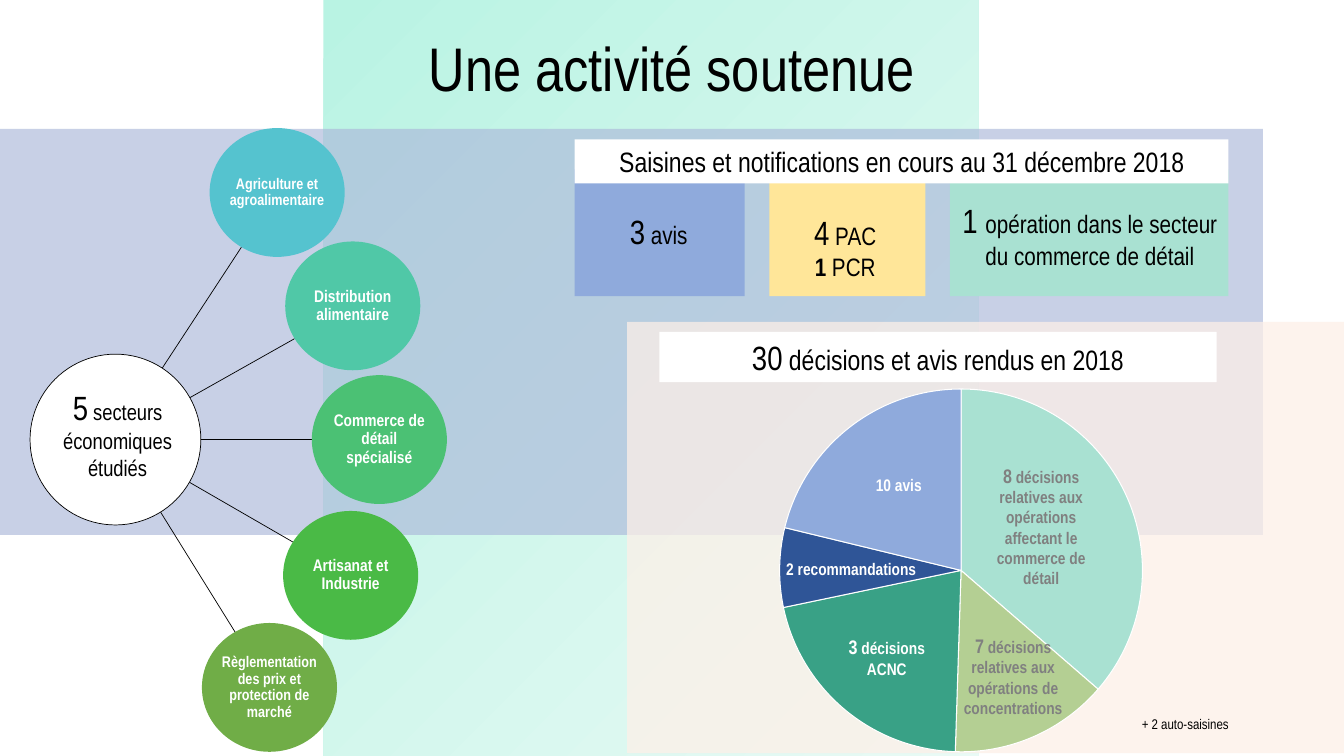
import math

from lxml import etree
from pptx import Presentation
from pptx.chart.data import CategoryChartData
from pptx.dml.color import RGBColor
from pptx.enum.chart import XL_CHART_TYPE
from pptx.enum.shapes import MSO_CONNECTOR, MSO_SHAPE
from pptx.enum.text import MSO_ANCHOR, PP_ALIGN
from pptx.oxml.ns import qn
from pptx.util import Pt

RECTANGLE, OVAL = MSO_SHAPE.RECTANGLE, MSO_SHAPE.OVAL
STRAIGHT = MSO_CONNECTOR.STRAIGHT
PIE = XL_CHART_TYPE.PIE
LEFT, CENTER = PP_ALIGN.LEFT, PP_ALIGN.CENTER
TOP, MIDDLE = MSO_ANCHOR.TOP, MSO_ANCHOR.MIDDLE

FONT = "Arial Narrow"
COLORS = {
    "black": "000000", "white": "FFFFFF", "gray": "808080",
    "mint_start": "B9F3E3", "mint_end": "E9FAF5",
    "band": "ABB8DA", "peach": "FDF0E8",
    "aqua": "A9E1D2", "blue": "8FAADC", "yellow": "FFE699",
    "olive": "B4CF93", "green": "39A186", "navy": "2F5597",
    "farming": "55C3CF", "food": "50C8A7", "retail": "4BC174",
    "craft": "4ABA46", "pricing": "70AD47",
}

# Centre x, centre y, colour, label, text size
SECTORS = [
    (198, 137.5, "farming", "Agriculture et agroalimentaire", 11),
    (252, 218.5, "food", "Distribution alimentaire", 12),
    (271, 314, "retail", "Commerce de détail spécialisé", 12),
    (250.5, 411, "craft", "Artisanat et Industrie", 12),
    (192.5, 491, "pricing",
     "Règlementation des prix et protection de marché", 11),
]
SECTOR_WIDTH, SECTOR_HEIGHT = 96.5, 92
HUB_X, HUB_Y, HUB_RADIUS = 82.5, 314, 61

SLICES = [(36, "aqua"), (14, "olive"), (21, "green"), (7, "navy"), (21, "blue")]

# Left, top, width, height, colour, alignment, paragraphs of (text, size, bold)
TEXTS = [
    (35, 273, 98, 75, "black", CENTER,
     [[("5", 24, False), (" secteurs économiques étudiés", 16, False)]]),
    (471, 237, 398, 36, "black", CENTER,
     [[("30", 24, False), (" décisions et avis rendus en 2018", 20, False)]]),
    (410.5, 99.5, 467.5, 31.5, "black", CENTER,
     [[("Saisines et notifications en cours au 31 décembre 2018", 20, False)]]),
    (432, 147, 77, 36, "black", CENTER,
     [[("3", 24, False), (" avis", 18, False)]]),
    (549.5, 147.5, 108.5, 58, "black", CENTER,
     [[("4", 24, False), (" PAC", 18, False)],
      [("1", 18, True), (" PCR", 18, False)]]),
    (679, 139, 199, 58, "black", CENTER,
     [[("1 ", 24, False),
       ("opération dans le secteur du commerce de détail", 18, False)]]),
    (618.5, 335.5, 50, 22, "white", LEFT, [[("10 avis", 12, True)]]),
    (554.5, 395.5, 112, 22, "white", LEFT, [[("2 recommandations", 12, True)]]),
    (599, 450, 69, 39, "white", CENTER,
     [[("3", 14, True), (" décisions ACNC", 12, True)]]),
    (694, 327.5, 99.5, 97, "gray", CENTER,
     [[("8", 14, True), (" décisions relatives aux opérations affectant "
                         "le commerce de détail", 12, True)]]),
    (674, 449, 99.5, 68, "gray", CENTER,
     [[("7", 14, True),
       (" décisions relatives aux opérations de concentrations", 12, True)]]),
    (808.5, 507.5, 123, 19.5, "black", LEFT,
     [[("+ 2 auto-saisines", 10, False)]]),
]


def rgb(name):
    return RGBColor.from_string(COLORS[name])


def add_box(slide, kind, left, top, width, height, color, opacity=100):
    shape = slide.shapes.add_shape(
        kind, Pt(left), Pt(top), Pt(width), Pt(height))
    shape.shadow.inherit = False
    shape.line.fill.background()
    shape.fill.solid()
    shape.fill.fore_color.rgb = rgb(color)
    if opacity < 100:
        color_element = next(shape.element.spPr.iter(qn("a:srgbClr")))
        alpha = etree.SubElement(color_element, qn("a:alpha"))
        alpha.set("val", str(opacity * 1000))
    return shape


def outline(line):
    line.color.rgb = rgb("black")
    line.width = Pt(0.5)


def style_paragraph(paragraph, color, align, size=None, bold=None):
    paragraph.alignment = align
    paragraph.font.name = FONT
    paragraph.font.color.rgb = rgb(color)
    paragraph.font.size = Pt(size) if size else None
    paragraph.font.bold = bold


def add_text(slide, left, top, width, height, color, align, paragraphs):
    box = slide.shapes.add_textbox(Pt(left), Pt(top), Pt(width), Pt(height))
    frame = box.text_frame
    frame.word_wrap = True
    frame.vertical_anchor = TOP
    for index, runs in enumerate(paragraphs):
        paragraph = frame.add_paragraph() if index else frame.paragraphs[0]
        style_paragraph(paragraph, color, align)
        for text, size, bold in runs:
            run = paragraph.add_run()
            run.text = text
            run.font.size = Pt(size)
            run.font.bold = bold


def add_title(slide, text):
    title = slide.shapes.title
    title.left, title.top, title.width, title.height = (
        Pt(66), Pt(19.5), Pt(828), Pt(63))
    title.text_frame.text = text
    title.text_frame.vertical_anchor = MIDDLE
    paragraph = title.text_frame.paragraphs[0]
    style_paragraph(paragraph, "black", CENTER, 44)
    paragraph.line_spacing = 0.9
    title.element.getparent().append(title.element)  # above the background


def add_spoke(slide, x, y):
    """Join the rim of the hub to the rim of the sector centred on x, y."""
    angle = math.atan2(y - HUB_Y, x - HUB_X)
    cosine, sine = math.cos(angle), math.sin(angle)
    reach = 1 / math.hypot(2 * cosine / SECTOR_WIDTH, 2 * sine / SECTOR_HEIGHT)
    spoke = slide.shapes.add_connector(
        STRAIGHT,
        Pt(HUB_X + HUB_RADIUS * cosine), Pt(HUB_Y + HUB_RADIUS * sine),
        Pt(x - reach * cosine), Pt(y - reach * sine))
    outline(spoke.line)
    etree.SubElement(spoke.element.spPr, qn("a:effectLst"))


def add_sector(slide, x, y, color, label, size):
    sector = add_box(slide, OVAL, x - SECTOR_WIDTH / 2, y - SECTOR_HEIGHT / 2,
                     SECTOR_WIDTH, SECTOR_HEIGHT, color)
    frame = sector.text_frame
    frame.margin_left = frame.margin_right = 0
    frame.margin_top = frame.margin_bottom = 0
    frame.word_wrap = True
    frame.vertical_anchor = MIDDLE
    frame.text = label
    style_paragraph(frame.paragraphs[0], "white", CENTER, size, True)
    frame.paragraphs[0].line_spacing = 0.9


def add_pie(slide):
    data = CategoryChartData()
    data.categories = [str(number + 1) for number in range(len(SLICES))]
    data.add_series("Series 1", [value for value, _ in SLICES])
    chart = slide.shapes.add_chart(
        PIE, Pt(551.5), Pt(272.5), Pt(270), Pt(270), data).chart
    chart.has_legend = chart.has_title = False
    chart.font.name = "Calibri"
    chart.font.size = Pt(10)
    chart.font.color.rgb = rgb("black")
    plot = chart.plots[0]
    plot.vary_by_categories = True
    for index, (_, color) in enumerate(SLICES):
        style = plot.series[0].points[index].format
        style.fill.solid()
        style.fill.fore_color.rgb = rgb(color)
        style.line.color.rgb = rgb("white")
        style.line.width = Pt(0.75)
    set_inner_plot(chart, 0.02)


def set_inner_plot(chart, margin):
    """Fill the chart frame with the pie, leaving an equal margin."""
    area = next(chart.element.iter(qn("c:plotArea")))
    for old_layout in area.findall(qn("c:layout")):
        area.remove(old_layout)
    layout = etree.Element(qn("c:layout"))
    manual = etree.SubElement(layout, qn("c:manualLayout"))
    extent = 1 - 2 * margin
    for tag, value in (("layoutTarget", "inner"), ("xMode", "edge"),
                       ("yMode", "edge"), ("x", margin), ("y", margin),
                       ("w", extent), ("h", extent)):
        etree.SubElement(manual, qn("c:" + tag)).set("val", str(value))
    area.insert(0, layout)


def add_background(slide):
    column = add_box(slide, RECTANGLE, 231, 0, 468, 540, "mint_start")
    column.fill.gradient()
    column.fill.gradient_angle = 315
    for stop, color in zip(column.fill.gradient_stops,
                           ("mint_start", "mint_end")):
        stop.color.rgb = rgb(color)
        stop.position = 0 if color == "mint_start" else 1
    add_box(slide, RECTANGLE, 0, 92, 902, 290, "band", 65)
    add_box(slide, RECTANGLE, 448, 230, 512, 308, "peach", 74)


def main():
    presentation = Presentation()
    presentation.slide_width, presentation.slide_height = Pt(960), Pt(540)
    slide = presentation.slides.add_slide(presentation.slide_layouts[5])
    add_background(slide)
    add_title(slide, "Une activité soutenue")
    add_pie(slide)
    for sector in SECTORS:
        add_spoke(slide, *sector[:2])
    hub = add_box(slide, OVAL, HUB_X - HUB_RADIUS, HUB_Y - HUB_RADIUS,
                  2 * HUB_RADIUS, 2 * HUB_RADIUS, "white")
    outline(hub.line)
    for sector in SECTORS:
        add_sector(slide, *sector)
    for left, width, color in ((410.5, 121.5, "blue"), (549.5, 111.5, "yellow"),
                               (678.5, 199, "aqua")):
        add_box(slide, RECTANGLE, left, 121, width, 90.5, color)
    add_box(slide, RECTANGLE, 410.5, 99.5, 467, 31.5, "white")
    add_box(slide, RECTANGLE, 471, 237, 398, 36, "white")
    for text in TEXTS:
        add_text(slide, *text)
    presentation.save("out.pptx")


if __name__ == "__main__":
    main()
